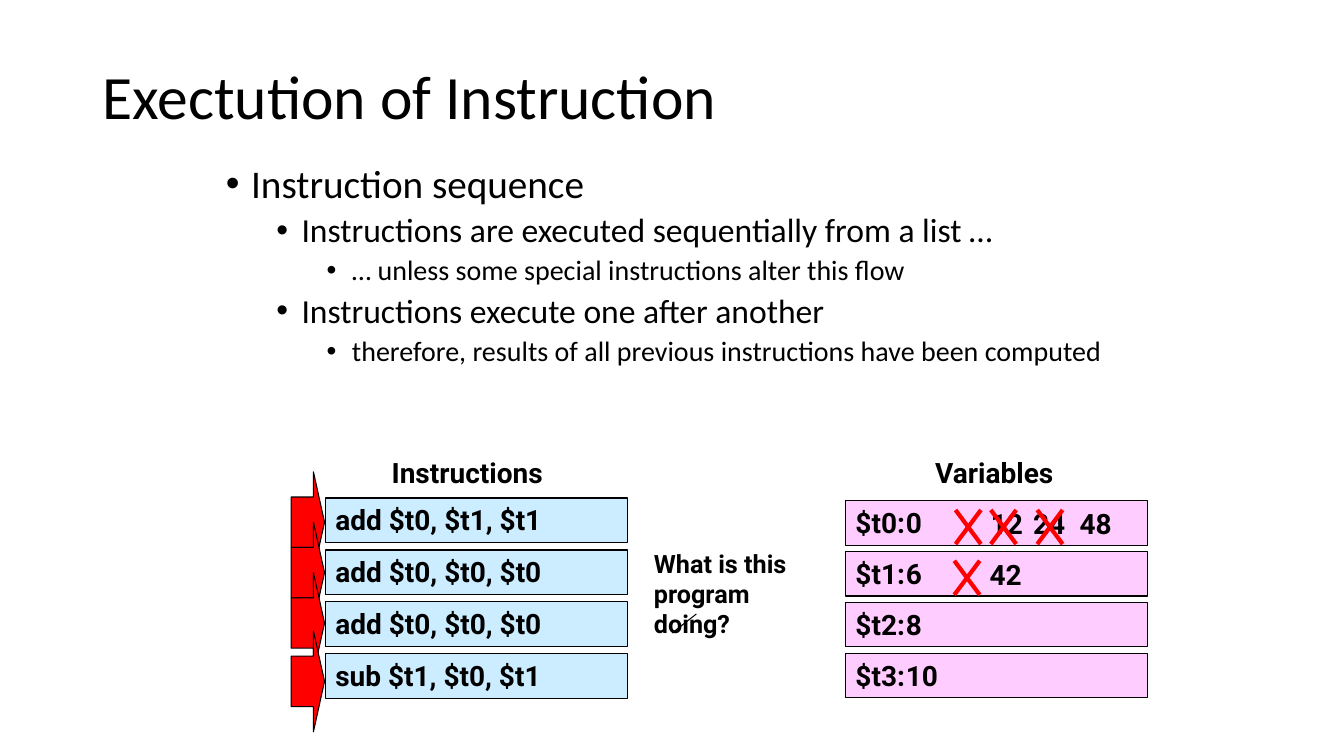
from dataclasses import dataclass

from lxml import etree
from pptx import Presentation
from pptx.dml.color import RGBColor
from pptx.enum.shapes import MSO_CONNECTOR, MSO_SHAPE
from pptx.enum.text import MSO_ANCHOR, MSO_AUTO_SIZE, PP_ALIGN
from pptx.oxml.ns import qn
from pptx.util import Cm, Pt

RECTANGLE = MSO_SHAPE.RECTANGLE
RIGHT_ARROW = MSO_SHAPE.RIGHT_ARROW
STRAIGHT = MSO_CONNECTOR.STRAIGHT
LEFT = PP_ALIGN.LEFT
TOP, MIDDLE = MSO_ANCHOR.TOP, MSO_ANCHOR.MIDDLE
NO_FIT, GROW = MSO_AUTO_SIZE.NONE, MSO_AUTO_SIZE.SHAPE_TO_FIT_TEXT


@dataclass(frozen=True)
class Theme:
    """Colours, fonts and type sizes of the slide."""
    ink: RGBColor = RGBColor(0, 0, 0)
    accent: RGBColor = RGBColor(255, 0, 0)
    instruction: RGBColor = RGBColor(0xCC, 0xEC, 0xFF)
    variable: RGBColor = RGBColor(0xFF, 0xCC, 0xFF)
    text_font: str = "Calibri"
    code_font: str = "Roboto"
    title_size: int = 44
    body_sizes: tuple = (28, 24, 20)
    code_size: int = 20
    question_size: int = 18
    outline: float = 0.75
    cross: float = 3


@dataclass(frozen=True)
class Box:
    """A region of the slide, in centimetres."""
    left: float
    top: float
    width: float
    height: float

    def lengths(self):
        """Return the box as four lengths."""
        return Cm(self.left), Cm(self.top), Cm(self.width), Cm(self.height)


THEME = Theme()
ROW_HEIGHT = 1.12
HEADING_GAP = 1.2
OUTLINE = (
    (0, "Instruction sequence"),
    (1, "Instructions are executed sequentially from a list …"),
    (2, "… unless some special instructions alter this flow"),
    (1, "Instructions execute one after another"),
    (2, "therefore, results of all previous instructions have been computed"),
)
INSTRUCTIONS = ("add $t0, $t1, $t1", "add $t0, $t0, $t0", "add $t0, $t0, $t0", "sub $t1, $t0, $t1")
ARROW_OFFSETS = (0.54, 1.81, 3.08, 4.55)
VARIABLES = (
    ("$t0:\t0", ((2.77, "12"), (3.66, " 24"), (4.83, " 48"))),
    ("$t1:\t6", ((2.74, "42"),)),
    ("$t2:\t8", ()),
    ("$t3:\t10", ()),
)


def add_text(paragraph, text, size, font, bold=False):
    """Add one formatted run to a paragraph."""
    paragraph.alignment = LEFT
    run = paragraph.add_run()
    run.text = text
    run.font.size = Pt(size)
    run.font.name = font
    run.font.bold = bold
    run.font.color.rgb = THEME.ink


def add_label(slide, box, text, size=THEME.code_size, wrap=False):
    """Add a bold text box that grows with its text."""
    frame = slide.shapes.add_textbox(*box.lengths()).text_frame
    frame.word_wrap = wrap
    frame.auto_size = GROW
    add_text(frame.paragraphs[0], text, size, THEME.code_font, True)


def add_block(slide, kind, box, fill):
    """Add a filled and outlined shape without a shadow."""
    shape = slide.shapes.add_shape(kind, *box.lengths())
    shape.shadow.inherit = False
    shape.fill.solid()
    shape.fill.fore_color.rgb = fill
    shape.line.color.rgb = THEME.ink
    shape.line.width = Pt(THEME.outline)
    return shape


def add_row(slide, box, text, fill):
    """Add one row of a list of instructions or variables."""
    frame = add_block(slide, RECTANGLE, box, fill).text_frame
    frame.vertical_anchor = TOP
    frame.auto_size = GROW
    add_text(frame.paragraphs[0], text, THEME.code_size, THEME.code_font, True)


def add_line(slide, start, end, color, width):
    """Add a straight line between two points."""
    line = slide.shapes.add_connector(STRAIGHT, *(Cm(value) for value in start + end))
    line.line.color.rgb = color
    line.line.width = Pt(width)
    etree.SubElement(line.element.spPr, qn("a:effectLst"))


def add_cross(slide, box):
    """Strike out a value with two diagonal lines."""
    right, bottom = box.left + box.width, box.top + box.height
    add_line(slide, (box.left, box.top), (right, bottom), THEME.accent, THEME.cross)
    add_line(slide, (right, box.top), (box.left, bottom), THEME.accent, THEME.cross)


def set_bullet(paragraph, level):
    """Give a paragraph a hanging round bullet for its level."""
    properties = paragraph._p.get_or_add_pPr()
    properties.set("marL", str(Cm(0.635 + 1.27 * level)))
    properties.set("indent", str(-Cm(0.635)))
    etree.SubElement(properties, qn("a:buFont")).set("typeface", "Arial")
    etree.SubElement(properties, qn("a:buChar")).set("char", "•")


def place(placeholder, box, anchor):
    """Move a placeholder to a box and return its text frame."""
    placeholder.left, placeholder.top, placeholder.width, placeholder.height = box.lengths()
    frame = placeholder.text_frame
    frame.word_wrap = True
    frame.auto_size = NO_FIT
    frame.vertical_anchor = anchor
    return frame


def fill_title(slide, box):
    """Write the slide title."""
    paragraph = place(slide.shapes.title, box, MIDDLE).paragraphs[0]
    paragraph.line_spacing = 0.9
    add_text(paragraph, "Exectution of Instruction", THEME.title_size, THEME.text_font)


def fill_outline(slide, box):
    """Write the bulleted outline."""
    frame = place(slide.placeholders[1], box, TOP)
    for index, (level, text) in enumerate(OUTLINE):
        paragraph = frame.add_paragraph() if index else frame.paragraphs[0]
        paragraph.level = level
        paragraph.line_spacing = 0.9
        paragraph.space_before = Pt(5 if level else 10)
        set_bullet(paragraph, level)
        add_text(paragraph, text, THEME.body_sizes[level], THEME.text_font)


def draw_instructions(slide, box):
    """Draw the instruction list with an arrow for each step."""
    pitch = 1.31
    for index, text in enumerate(INSTRUCTIONS):
        top = box.top + HEADING_GAP + index * pitch
        add_row(slide, Box(box.left, top, box.width, ROW_HEIGHT), text, THEME.instruction)
    add_label(slide, Box(box.left + 1.42, box.top, 4.9, ROW_HEIGHT), "Instructions")
    for offset in ARROW_OFFSETS:
        arrow_box = Box(box.left - 0.86, box.top + offset, 0.84, 2.54)
        arrow = add_block(slide, RIGHT_ARROW, arrow_box, THEME.accent)
        arrow.adjustments[1] = 0.333


def draw_variables(slide, box):
    """Draw the variables with struck-out values and their successors."""
    pitch = 1.28
    for index, (text, updates) in enumerate(VARIABLES):
        top = box.top + HEADING_GAP + 0.07 + index * pitch
        add_row(slide, Box(box.left, top, box.width, ROW_HEIGHT), text, THEME.variable)
        for offset, value in updates:
            cross = Box(box.left + offset, top + 0.23, 0.64, 0.86)
            add_cross(slide, cross)
            add_label(slide, Box(cross.left + cross.width, top + 0.02, 1.6, ROW_HEIGHT), value)
    add_label(slide, Box(box.left + 2.01, box.top, 3.84, ROW_HEIGHT), "Variables")


def draw_question(slide, box):
    """Draw the question and its short stroke."""
    add_label(slide, box, "What is this program doing?", THEME.question_size, True)
    start = (box.left + 0.71, box.top + 2.26)
    end = (box.left + 1.32, box.top + 1.78)
    add_line(slide, start, end, THEME.ink, THEME.outline)


def main():
    """Build and save the presentation."""
    presentation = Presentation()
    presentation.slide_width, presentation.slide_height = Cm(33.87), Cm(19.05)
    slide = presentation.slides.add_slide(presentation.slide_layouts[1])
    fill_title(slide, Box(2.33, 1.01, 29.21, 3))
    fill_outline(slide, Box(5.44, 4.01, 25.4, 17.09))
    draw_variables(slide, Box(21.31, 11.35, 7.62, 6.23))
    draw_instructions(slide, Box(8.2, 11.35, 7.62, 6.23))
    draw_question(slide, Box(16.23, 13.69, 4.88, 2.57))
    presentation.save("out.pptx")


if __name__ == "__main__":
    main()
